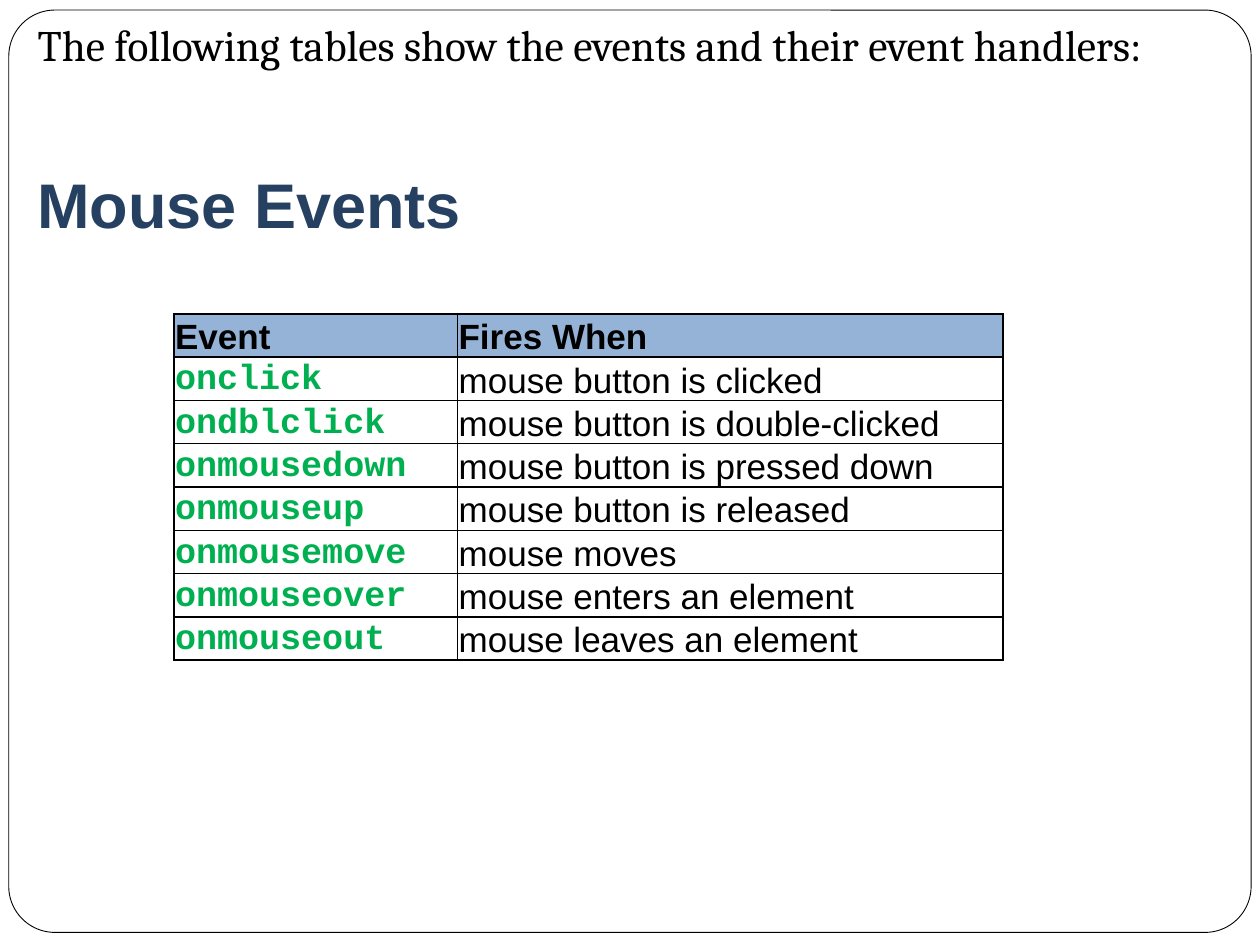
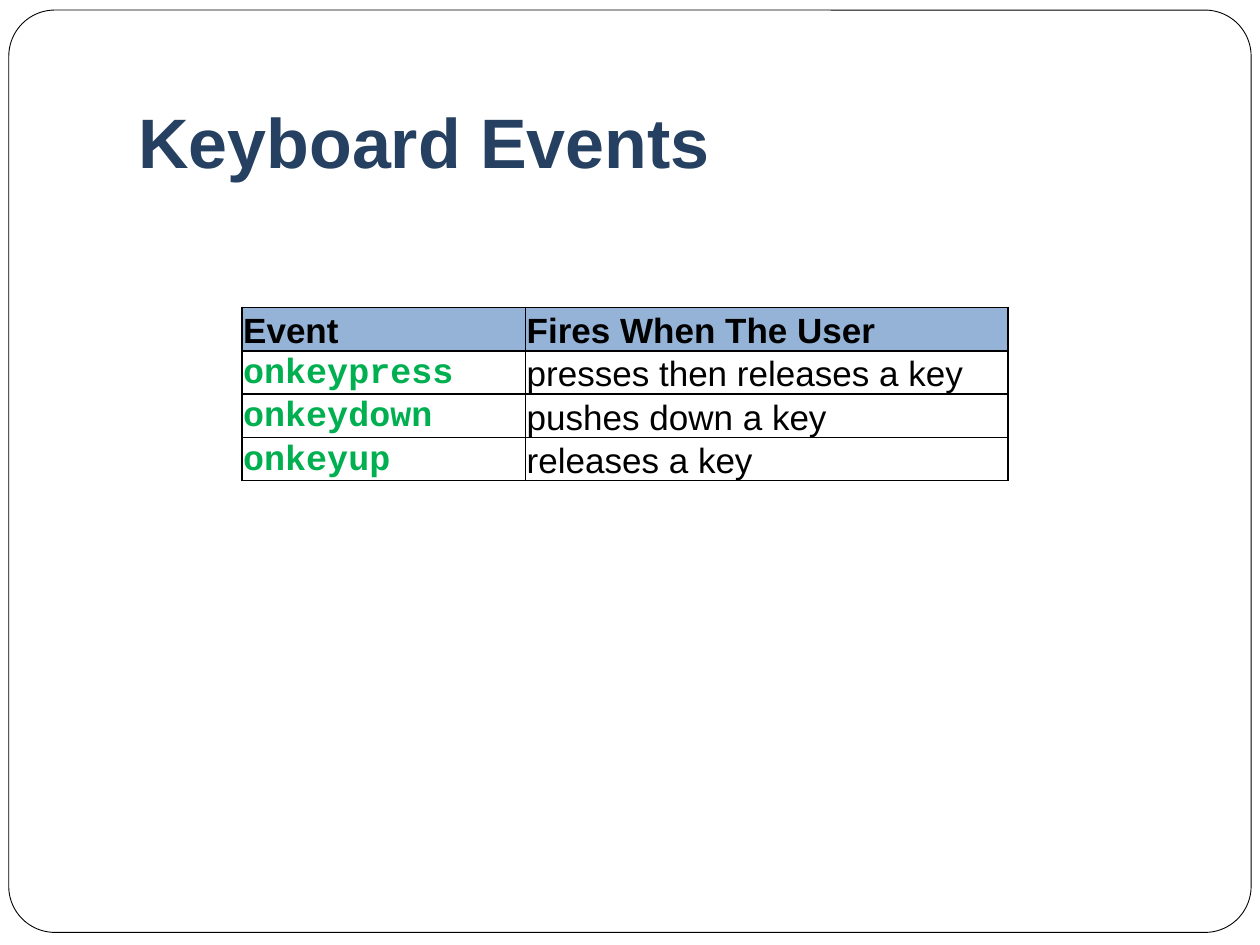
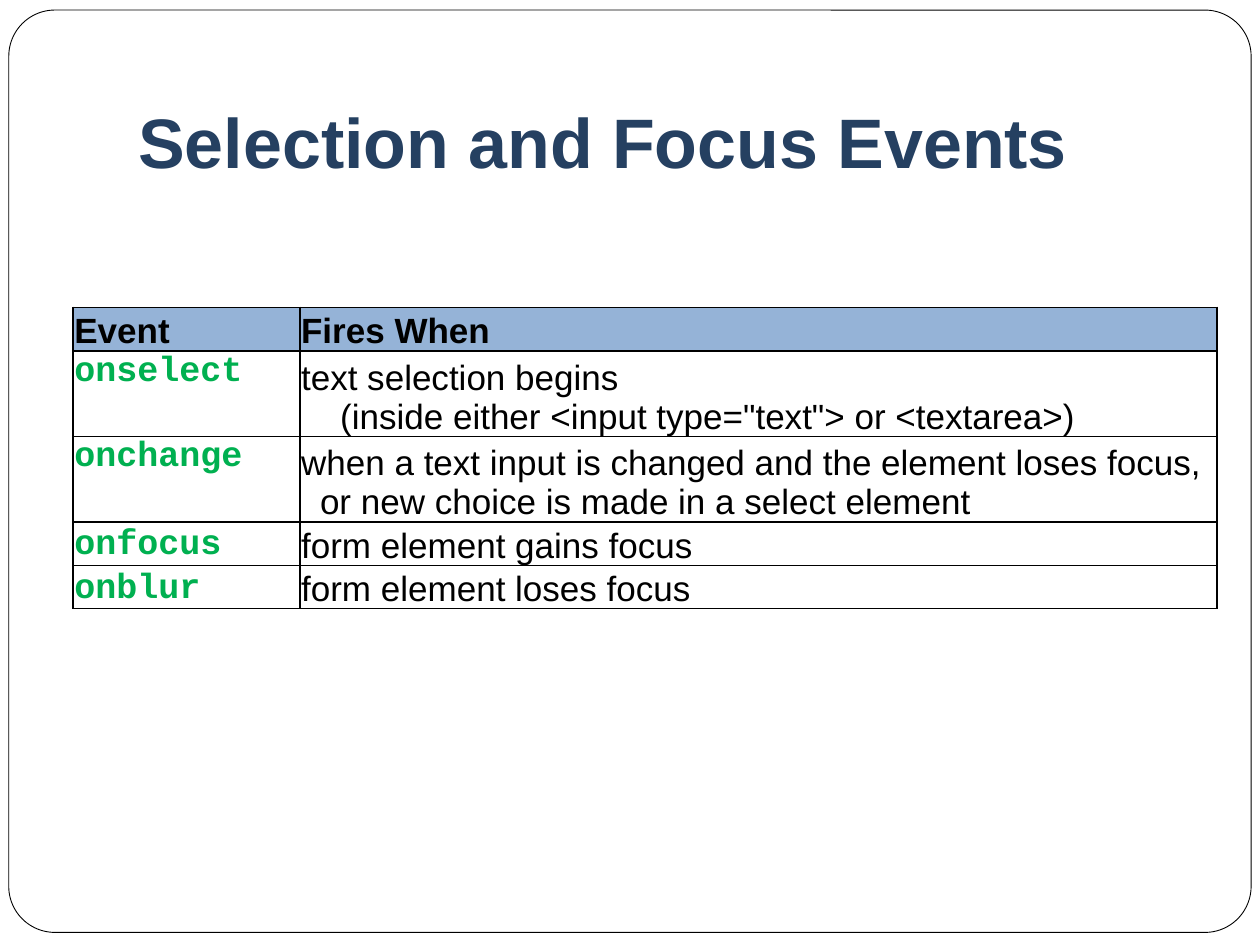
from lxml import etree
from pptx import Presentation
from pptx.dml.color import RGBColor
from pptx.enum import shapes, text
from pptx.oxml import ns
from pptx.util import Inches, Pt

BLACK = RGBColor(0, 0, 0)
WHITE = RGBColor(255, 255, 255)
NAVY = RGBColor(0x25, 0x40, 0x61)
BLUE = RGBColor(0x95, 0xB3, 0xD7)
GREEN = RGBColor(0, 0xB0, 0x50)
ROW = 0.34
INTRO = "The following tables show the events and their event handlers:"

PAGES = [
    ("Mouse Events", 36, (0.2, 1.23, 8.5, 0.78), (1.38, 2.49), (2.25, 4.33), [
        ("Event", "Fires When"),
        ("onclick", "mouse button is clicked"),
        ("ondblclick", "mouse button is double-clicked"),
        ("onmousedown", "mouse button is pressed down"),
        ("onmouseup", "mouse button is released"),
        ("onmousemove", "mouse moves"),
        ("onmouseover", "mouse enters an element"),
        ("onmouseout", "mouse leaves an element"),
    ]),
    ("Keyboard Events", 40, (1, 0.3, 8.5, 1.25), (1.92, 2.44), (2.25, 3.83), [
        ("Event", "Fires When The User"),
        ("onkeypress", "presses then releases a key"),
        ("onkeydown", "pushes down a key"),
        ("onkeyup", "releases a key"),
    ]),
    ("Selection and Focus Events", 40, (1, 0.3, 8.5, 1.25), (0.58, 2.44), (1.8, 7.28), [
        ("Event", "Fires When"),
        ("onselect", "text selection begins",
         '(inside either <input type="text"> or <textarea>)', 0.31),
        ("onchange", "when a text input is changed and the element loses focus,",
         "or new choice is made in a select element", 0.15),
        ("onfocus", "form element gains focus"),
        ("onblur", "form element loses focus"),
    ]),
]


def write(para, words, size, face, color, bold=False):
    run = para.add_run()
    run.text = words
    font = run.font
    font.size, font.name, font.bold = Pt(size), face, bold
    font.color.rgb = color


def edge(cell):
    props = cell._tc.get_or_add_tcPr()
    for side in ("lnL", "lnR", "lnT", "lnB"):
        line = etree.SubElement(props, ns.qn("a:" + side), w=str(Pt(1)))
        fill = etree.SubElement(line, ns.qn("a:solidFill"))
        etree.SubElement(fill, ns.qn("a:srgbClr"), val=str(BLACK))


deck = Presentation()
deck.slide_width, deck.slide_height = Inches(10), Inches(7.5)

for title, size, place, spot, cols, rows in PAGES:
    slide = deck.slides.add_slide(deck.slide_layouts[6])
    frame = slide.shapes.add_shape(
        shapes.MSO_SHAPE.ROUNDED_RECTANGLE,
        Inches(0.07), Inches(0.08), Inches(9.86), Inches(7.32))
    frame.adjustments[0] = 0.05
    frame.shadow.inherit = False
    frame.fill.solid()
    frame.fill.fore_color.rgb = WHITE
    frame.line.color.rgb = BLACK
    frame.line.width = Pt(0.5)

    head = slide.shapes.add_textbox(*map(Inches, place)).text_frame
    head.word_wrap = True
    head.vertical_anchor = text.MSO_ANCHOR.BOTTOM
    head.margin_bottom = Inches(0.1)
    write(head.paragraphs[0], title, size, "Arial", NAVY, True)

    grid = slide.shapes.add_table(
        len(rows), 2, *map(Inches, spot),
        Inches(sum(cols)), Inches(ROW * len(rows))).table
    for col, width in zip(grid.columns, cols):
        col.width = Inches(width)
    for i, (event, when, *more) in enumerate(rows):
        top = i == 0
        grid.rows[i].height = Inches(ROW * (2 if more else 1))
        for j, words in enumerate((event, when)):
            cell = grid.cell(i, j)
            cell.margin_left = cell.margin_right = cell.margin_top = Inches(0.01)
            cell.margin_bottom = 0
            cell.vertical_anchor = text.MSO_ANCHOR.BOTTOM
            edge(cell)
            cell.fill.solid()
            cell.fill.fore_color.rgb = BLUE if top else WHITE
            name = j == 0 and not top
            if name and more:
                cell.vertical_anchor = text.MSO_ANCHOR.TOP
            write(cell.text_frame.paragraphs[0], words, 20,
                  "Courier New" if name else "Arial",
                  GREEN if name else BLACK, top or name)
        if more:
            tail, dent = more
            para = grid.cell(i, 1).text_frame.add_paragraph()
            para._p.get_or_add_pPr().set("marL", str(Inches(dent)))
            write(para, tail, 20, "Arial", BLACK)

intro = deck.slides[0].shapes.add_textbox(
    Inches(0.2), Inches(0.21), Inches(9.38), Inches(0.94)).text_frame
intro.word_wrap = True
para = intro.paragraphs[0]
para.line_spacing = 0.7
para.space_before = Pt(5.8)
write(para, INTRO, 24.8, "Cambria", BLACK)

deck.save("out.pptx")
